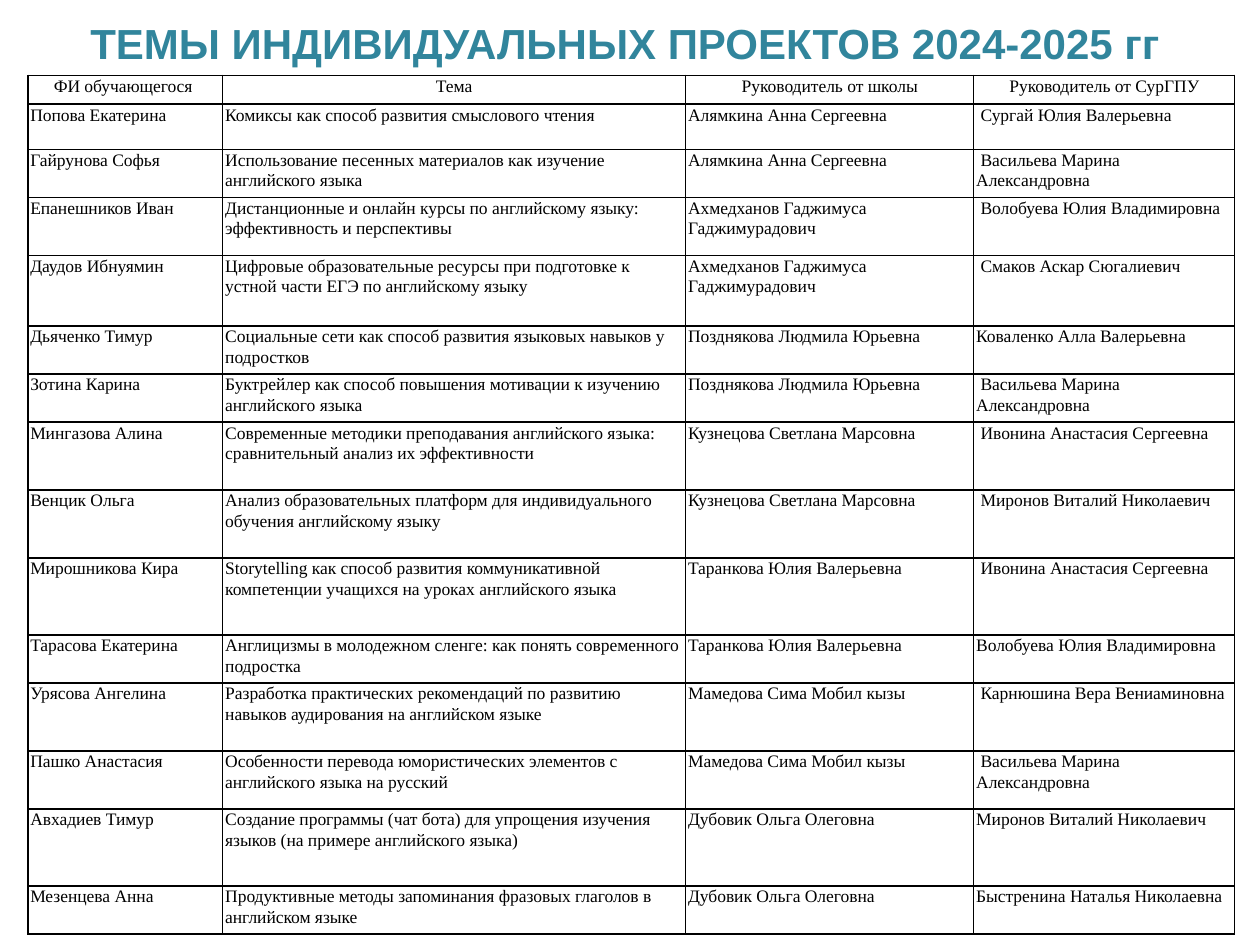
import pptx
import pptx.dml.color
import pptx.enum.text
import pptx.oxml
import pptx.oxml.ns
import pptx.util
from dataclasses import dataclass

Cm = pptx.util.Cm
Pt = pptx.util.Pt
RGBColor = pptx.dml.color.RGBColor
Align = pptx.enum.text.PP_ALIGN
Anchor = pptx.enum.text.MSO_ANCHOR


@dataclass(frozen=True)
class Theme:
    heading_color: str = "31859C"
    ink: str = "000000"
    heading_font: str = "Arial"
    table_font: str = "Times New Roman"
    heading_size: int = 24
    table_size: int = 10
    border_width: int = 1


theme = Theme()


def format_text(paragraph, font, size, color, bold, **layout):
    for name, value in layout.items():
        setattr(paragraph, name, value)
    for name, value in {"name": font, "size": Pt(size), "bold": bold}.items():
        setattr(paragraph.runs[0].font, name, value)
    paragraph.runs[0].font.color.rgb = RGBColor.from_string(color)


def add_borders(cell):
    properties = cell._tc.get_or_add_tcPr()
    for side in ("lnL", "lnR", "lnT", "lnB"):
        properties.append(pptx.oxml.parse_xml(
            f'<a:{side} {pptx.oxml.ns.nsdecls("a")} w="{Pt(theme.border_width)}">'
            f'<a:solidFill><a:srgbClr val="{theme.ink}"/></a:solidFill></a:{side}>'))


column_widths = [3.93, 9.33, 5.81, 5.26]
headings = ["ФИ обучающегося ", "Тема", "Руководитель от школы", "Руководитель от СурГПУ"]
header_height = 0.58

# Row height in cm, student, topic, school supervisor, university supervisor
projects = [
    (0.91, "Попова Екатерина", "Комиксы как способ развития смыслового чтения",
     "Алямкина Анна Сергеевна", " Сургай Юлия Валерьевна"),
    (0.97, "Гайрунова Софья", "Использование песенных материалов как изучение английского языка",
     "Алямкина Анна Сергеевна", " Васильева Марина Александровна"),
    (1.17, "Епанешников Иван",
     "Дистанционные и онлайн курсы по английскому языку: эффективность и перспективы",
     "Ахмедханов Гаджимуса Гаджимурадович", " Волобуева Юлия Владимировна"),
    (1.42, "Даудов Ибнуямин",
     "Цифровые образовательные ресурсы при подготовке к устной части ЕГЭ по английскому языку",
     "Ахмедханов Гаджимуса Гаджимурадович", " Смаков Аскар Сюгалиевич"),
    (0.97, "Дьяченко Тимур", "Социальные сети как способ развития языковых навыков у подростков",
     "Позднякова Людмила Юрьевна", "Коваленко Алла Валерьевна"),
    (0.97, "Зотина Карина",
     "Буктрейлер как способ повышения мотивации к изучению английского языка",
     "Позднякова Людмила Юрьевна", " Васильева Марина Александровна"),
    (1.37, "Мингазова Алина",
     "Современные методики преподавания английского языка: сравнительный анализ их эффективности",
     "Кузнецова Светлана Марсовна", " Ивонина Анастасия Сергеевна"),
    (1.37, "Венцик Ольга",
     "Анализ образовательных платформ для индивидуального обучения английскому языку",
     "Кузнецова Светлана Марсовна", " Миронов Виталий Николаевич"),
    (1.55, "Мирошникова Кира",
     "Storytelling как способ развития коммуникативной компетенции учащихся "
     "на уроках английского языка",
     "Таранкова Юлия Валерьевна", " Ивонина Анастасия Сергеевна"),
    (0.97, "Тарасова Екатерина",
     "Англицизмы в молодежном сленге: как понять современного подростка",
     "Таранкова Юлия Валерьевна", "Волобуева Юлия Владимировна"),
    (1.37, "Урясова Ангелина",
     "Разработка практических рекомендаций по развитию навыков аудирования на английском языке",
     "Мамедова Сима Мобил кызы", " Карнюшина Вера Вениаминовна"),
    (1.17, "Пашко Анастасия",
     "Особенности перевода юмористических элементов с английского языка на русский",
     "Мамедова Сима Мобил кызы", " Васильева Марина Александровна"),
    (1.55, "Авхадиев Тимур",
     "Создание программы (чат бота) для упрощения изучения языков (на примере английского языка)",
     "Дубовик Ольга Олеговна", "Миронов Виталий Николаевич"),
    (0.97, "Мезенцева Анна",
     "Продуктивные методы запоминания фразовых глаголов в английском языке",
     "Дубовик Ольга Олеговна", "Быстренина Наталья Николаевна"),
]
rows = [(header_height, *headings), *projects]

deck = pptx.Presentation()
deck.slide_width, deck.slide_height = Cm(25.4), Cm(19.05)
slide = deck.slides.add_slide(deck.slide_layouts[5])

heading = slide.shapes.title
for name, value in {"left": 1.17, "top": 0, "width": 22.86, "height": 1.73}.items():
    setattr(heading, name, Cm(value))
heading.text_frame.text = "ТЕМЫ ИНДИВИДУАЛЬНЫХ ПРОЕКТОВ 2024-2025 гг"
heading.text_frame.vertical_anchor = Anchor.MIDDLE
format_text(heading.text_frame.paragraphs[0], theme.heading_font, theme.heading_size,
            theme.heading_color, True, alignment=Align.CENTER)

project_table = slide.shapes.add_table(
    len(rows), len(headings), Cm(0.56), Cm(1.52),
    Cm(sum(column_widths)), Cm(sum(row[0] for row in rows))).table
project_table.first_row = project_table.horz_banding = False
for column, width in zip(project_table.columns, column_widths):
    column.width = Cm(width)

cell_format = {"margin_left": Cm(0.05), "margin_right": Cm(0.05), "margin_top": 0,
               "margin_bottom": 0, "vertical_anchor": Anchor.TOP}
for row_index, (height, *entries) in enumerate(rows):
    project_table.rows[row_index].height = Cm(height)
    alignment = Align.LEFT if row_index else Align.CENTER
    for column_index, entry in enumerate(entries):
        cell = project_table.cell(row_index, column_index)
        cell.text = entry
        for name, value in cell_format.items():
            setattr(cell, name, value)
        add_borders(cell)
        cell.fill.background()
        format_text(cell.text_frame.paragraphs[0], theme.table_font, theme.table_size,
                    theme.ink, False, alignment=alignment, line_spacing=1.07)

deck.save("out.pptx")
